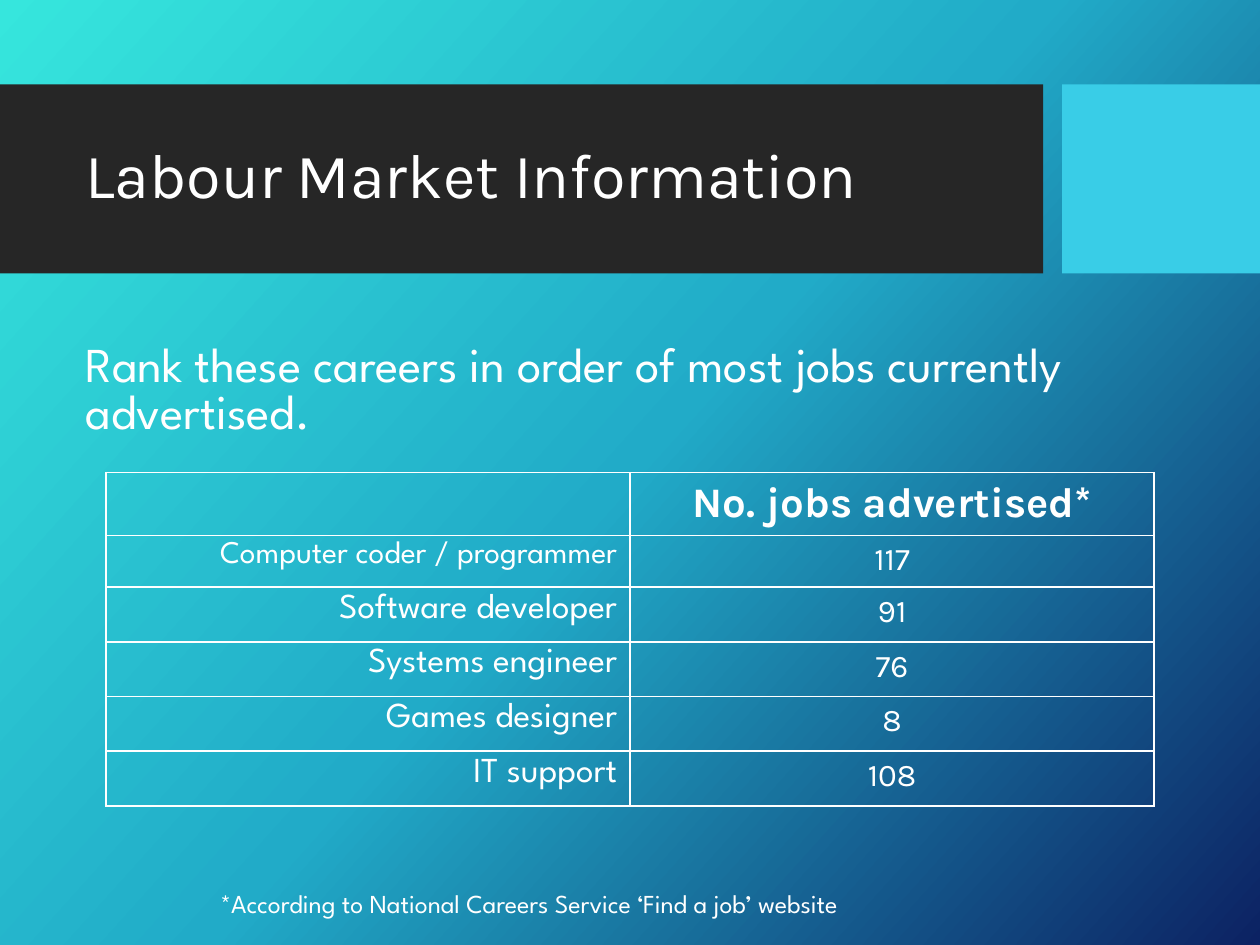
from copy import deepcopy
from pptx import Presentation
from pptx import util as u
from pptx.dml.color import RGBColor
from pptx.enum import shapes, text
from pptx.oxml.ns import qn

HUES = {"aqua": "36E6DD", "teal": "21ABC8", "navy": "0C2263",
        "dark": "262626", "sky": "39CDE7", "white": "FFFFFF"}
SANS, ROUND = "Karla", "League Spartan"
FADE = [(0, "aqua"), (0.5, "teal"), (1, "navy")]
BARS = [(0, 8.28, "dark"), (8.43, 1.57, "sky")]
TITLE = "Labour Market Information"
TASK = "Rank these careers in order of most jobs currently advertised."
NOTE = "*According to National Careers Service ‘Find a job’ website"
HEAD = "No. jobs advertised*"
JOBS = [("Computer coder / programmer", 18, "117"),
        ("Software developer", 20, "91"),
        ("Systems engineer", 20, "76"),
        ("Games designer", 20, "8"),
        ("IT support", 20, "108")]


def tint(name):
    return RGBColor.from_string(HUES[name])


def write(frame, words, size, face, align="LEFT", bold=False):
    para = frame.paragraphs[0]
    para.alignment = getattr(text.PP_ALIGN, align)
    run = para.add_run()
    run.text = words
    run.font.size = u.Pt(size)
    run.font.name = face
    run.font.bold = bold
    run.font.color.rgb = tint("white")
    return para


def box(slide, area, words, size, face, space, anchor="TOP"):
    frame = slide.shapes.add_textbox(*map(u.Inches, area)).text_frame
    frame.word_wrap = True
    frame.vertical_anchor = getattr(text.MSO_ANCHOR, anchor)
    write(frame, words, size, face).line_spacing = space


def paint(slide):
    fill = slide.background.fill
    fill.gradient()
    fill.gradient_angle = 360 - 42
    stops = next(slide.element.iter(qn("a:gsLst")))
    stops.append(deepcopy(stops[-1]))
    for stop, (pos, name) in zip(fill.gradient_stops, FADE):
        stop.position = pos
        stop.color.rgb = tint(name)


def tabulate(slide):
    rows = len(JOBS) + 1
    area = map(u.Inches, (0.84, 3.75, 8.32, 0.41 * rows))
    table = slide.shapes.add_table(rows, 2, *area).table
    table.first_row = table.horz_banding = False
    for cell in table.iter_cells():
        cell.fill.background()
    write(table.cell(0, 1).text_frame, HEAD, 24, SANS, "CENTER", True)
    for row, (job, size, count) in enumerate(JOBS, 1):
        write(table.cell(row, 0).text_frame, job, size, ROUND, "RIGHT")
        write(table.cell(row, 1).text_frame, count, 18, SANS, "CENTER")


def main():
    deck = Presentation()
    deck.slide_width, deck.slide_height = u.Inches(10), u.Inches(7.5)
    slide = deck.slides.add_slide(deck.slide_layouts[6])
    paint(slide)
    for left, width, name in BARS:
        area = map(u.Inches, (left, 0.67, width, 1.5))
        bar = slide.shapes.add_shape(shapes.MSO_SHAPE.RECTANGLE, *area)
        bar.shadow.inherit = False
        bar.fill.solid()
        bar.fill.fore_color.rgb = tint(name)
        bar.line.fill.background()
    box(slide, (0.58, 0.82, 7.54, 1.18), TITLE, 36, SANS, 0.9, "MIDDLE")
    box(slide, (0.58, 2.69, 8.58, 0.9), TASK, 27.8, ROUND, 0.8)
    tabulate(slide)
    box(slide, (1.65, 7.04, 7.51, 0.3), NOTE, 14.8, ROUND, 0.8)
    deck.save("out.pptx")


if __name__ == "__main__":
    main()
